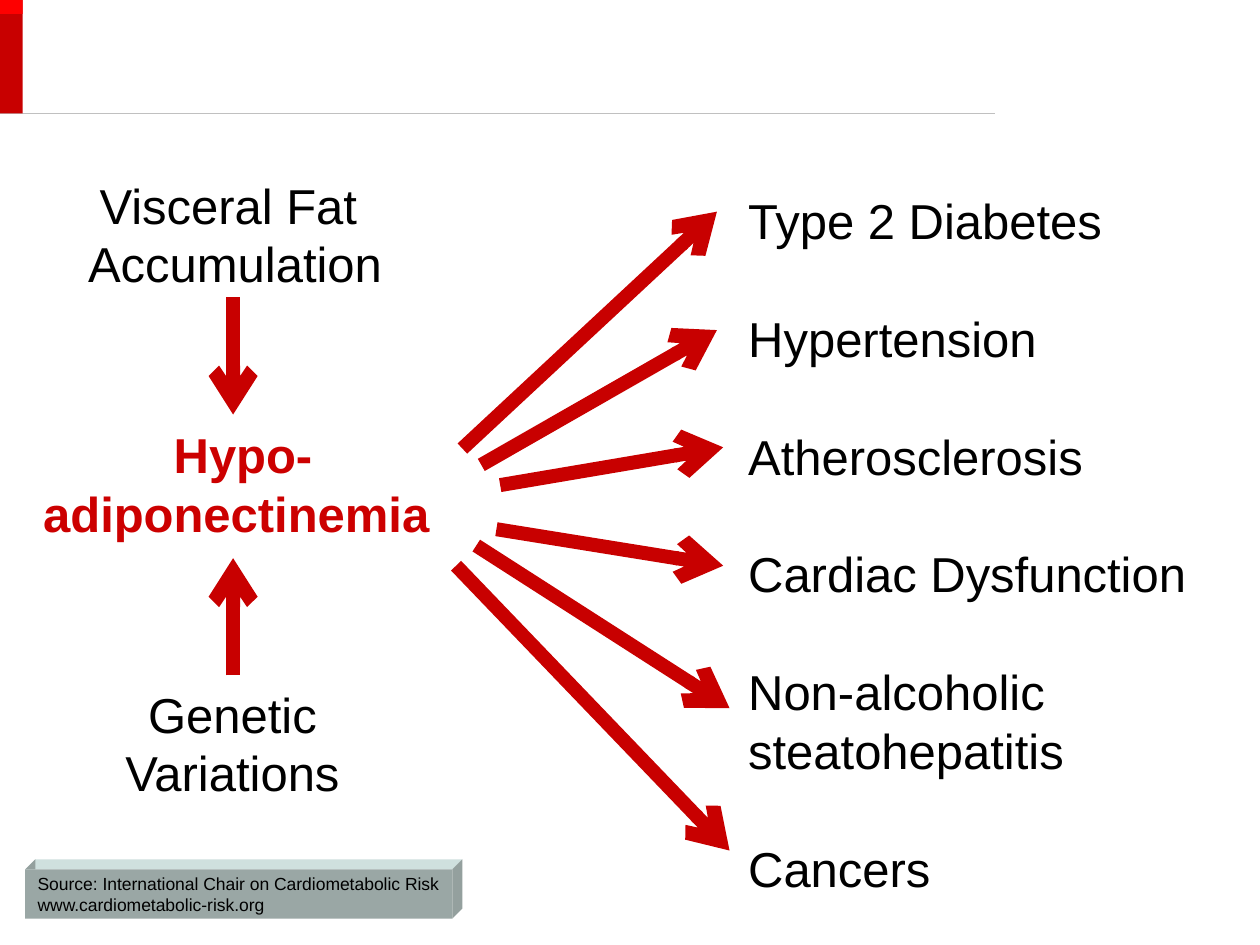
from typing import NamedTuple

from lxml.etree import SubElement
from pptx import Presentation
from pptx.dml.color import RGBColor
from pptx.enum.shapes import MSO_CONNECTOR, MSO_SHAPE
from pptx.enum.text import MSO_ANCHOR, PP_ALIGN
from pptx.oxml.ns import qn
from pptx.util import Inches, Pt

COLORS = {
    "red": "C80000", "bright": "FE0000", "accent": "CC0000", "rule": "C0C0C0",
    "black": "000000", "face": "9AA7A5", "top": "CFE0DE", "side": "94A09E",
}


class Para(NamedTuple):
    text: str
    spacing: float = 1.0
    before: float = 0


class Label(NamedTuple):
    box: tuple[float, float, float, float]
    paras: list[Para]
    inset: bool = False
    wrap: bool = False
    align: PP_ALIGN = PP_ALIGN.CENTER
    color: str = "black"
    bold: bool = False


class Arrow(NamedTuple):
    start: tuple[float, float]
    end: tuple[float, float]


LABELS = [
    Label((0.34, 3.37, 3.07, 0.93), [Para(" Hypo-"), Para("adiponectinemia")],
          color="accent", bold=True),
    Label((0.52, 1.39, 2.69, 0.93), [Para("Visceral Fat "), Para("Accumulation")],
          wrap=True),
    Label((0.88, 5.38, 1.93, 1.03), [Para("Genetic\vVariations")], inset=True),
    Label((5.84, 1, 4.04, 6.17),
          [Para("Type 2 Diabetes", 2.0), Para("Hypertension", 2.0),
           Para("Atherosclerosis", 2.0), Para("Cardiac Dysfunction", 2.0),
           Para("Non-alcoholic steatohepatitis", before=33.6), Para("Cancers", 2.0)],
          inset=True, wrap=True, align=PP_ALIGN.LEFT),
]

ARROWS = [
    # Causes to hypoadiponectinemia
    Arrow((1.85, 2.36), (1.85, 3.29)),
    Arrow((1.85, 5.36), (1.85, 4.43)),
    # Hypoadiponectinemia to outcomes, top to bottom
    Arrow((3.67, 3.56), (5.69, 1.68)),
    Arrow((3.82, 3.69), (5.69, 2.62)),
    Arrow((3.97, 3.85), (5.74, 3.55)),
    Arrow((3.94, 4.2), (5.74, 4.49)),
    Arrow((3.78, 4.33), (5.79, 5.62)),
    Arrow((3.62, 4.49), (5.79, 6.75)),
]


def rgb(name: str) -> RGBColor:
    return RGBColor.from_string(COLORS[name])


def paint(sp, color: str) -> None:
    sp.shadow.inherit = False
    sp.fill.solid()
    sp.fill.fore_color.rgb = rgb(color)
    sp.line.fill.background()


def add_rect(s, box: tuple, color: str):
    sp = s.shapes.add_shape(MSO_SHAPE.RECTANGLE, *map(Inches, box))
    paint(sp, color)
    return sp


def add_face(s, points: list, color: str) -> None:
    first, *rest = [(Inches(x), Inches(y)) for x, y in points]
    builder = s.shapes.build_freeform(*first)
    builder.add_line_segments(rest, close=True)
    paint(builder.convert_to_shape(), color)


def add_line(s, start: tuple, end: tuple, color: str, width: float, arrow=False) -> None:
    sp = s.shapes.add_connector(MSO_CONNECTOR.STRAIGHT, *map(Inches, start + end))
    sp.line.color.rgb = rgb(color)
    sp.line.width = Pt(width)
    if arrow:
        SubElement(sp.line._get_or_add_ln(), qn("a:tailEnd"), type="arrow")
    SubElement(sp._element.spPr, qn("a:effectLst"))


def write(tf, paras: list[Para], align: PP_ALIGN, fmt: dict) -> None:
    for i, para in enumerate(paras):
        p = tf.paragraphs[0] if i == 0 else tf.add_paragraph()
        p.text = para.text
        p.alignment = align
        p.line_spacing = para.spacing
        if para.before:
            p.space_before = Pt(para.before)
        for r in p.runs:
            for name, value in fmt.items():
                setattr(r.font, name, value)
            r.font.color.rgb = fmt_color(fmt)


def fmt_color(fmt: dict) -> RGBColor:
    return rgb("accent" if fmt["bold"] else "black")


def add_label(s, label: Label) -> None:
    tf = s.shapes.add_textbox(*map(Inches, label.box)).text_frame
    tf.word_wrap = label.wrap
    if not label.inset:
        for side in ("left", "top", "right", "bottom"):
            setattr(tf, f"margin_{side}", 0)
    fmt = {"name": "Arial", "size": Pt(28), "bold": label.bold}
    write(tf, label.paras, label.align, fmt)


def add_source_block(s, x: float, y: float, w: float, h: float, depth: float) -> None:
    right, back = x + w, y - depth
    add_face(s, [(x, y), (x + depth, back), (right + depth, back), (right, y)], "top")
    add_face(s, [(right, y), (right + depth, back),
                 (right + depth, y + h - depth), (right, y + h)], "side")
    add_face(s, [(x, y), (x + depth, back), (x + depth, y)], "side")
    tf = add_rect(s, (x, y, w, h), "face").text_frame
    tf.word_wrap = False
    tf.vertical_anchor = MSO_ANCHOR.MIDDLE
    lines = [Para("Source: International Chair on Cardiometabolic Risk"),
             Para("www.cardiometabolic-risk.org")]
    write(tf, lines, PP_ALIGN.LEFT, {"name": "Arial", "size": Pt(10), "bold": False})


def main() -> None:
    prs = Presentation()
    prs.slide_width, prs.slide_height = Inches(10), Inches(7.5)
    s = prs.slides.add_slide(prs.slide_layouts[6])

    # Header rule, source block and corner bars
    add_line(s, (0, 0.9), (7.9, 0.9), "rule", 0.75)
    add_source_block(s, 0.2, 6.9, 3.39, 0.39, 0.08)
    add_rect(s, (0, 0, 0.18, 0.9), "red")
    add_rect(s, (0, 0, 0.18, 0.11), "bright")

    # Causes, outcomes and the arrows between them
    for label in LABELS:
        add_label(s, label)
    for arrow in ARROWS:
        add_line(s, arrow.start, arrow.end, "red", 8, arrow=True)

    prs.save("out.pptx")


if __name__ == "__main__":
    main()
